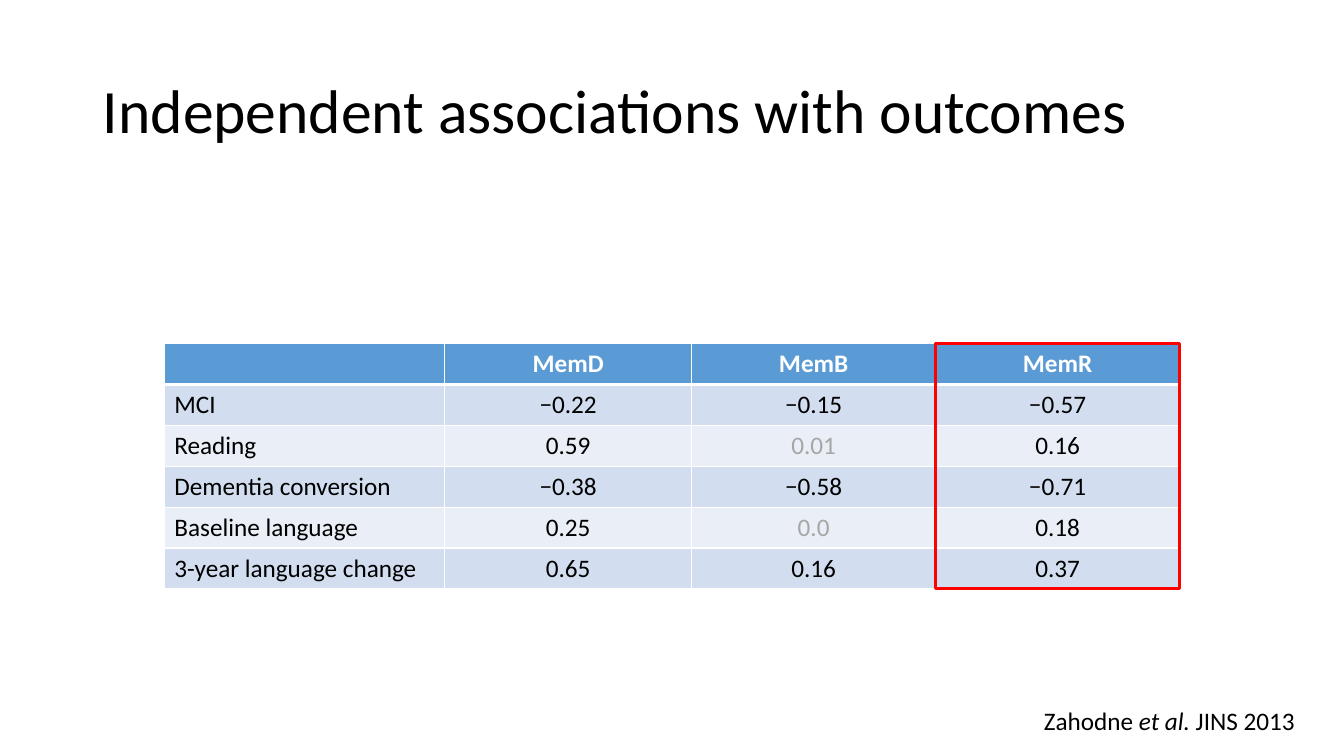
import pptx
import pptx.dml.color
import pptx.enum.shapes
import pptx.enum.text
import pptx.oxml
import pptx.oxml.ns
import pptx.util
from pptx.util import Inches

RGBColor = pptx.dml.color.RGBColor
PP_ALIGN = pptx.enum.text.PP_ALIGN
MSO_ANCHOR = pptx.enum.text.MSO_ANCHOR

BLACK = RGBColor(0x00, 0x00, 0x00)
WHITE = RGBColor(0xFF, 0xFF, 0xFF)
GREY = RGBColor(0xA6, 0xA6, 0xA6)
RED = RGBColor(0xFF, 0x00, 0x00)
HEADER_BLUE = RGBColor(0x5B, 0x9B, 0xD5)
BAND_DARK = RGBColor(0xD2, 0xDE, 0xEF)
BAND_LIGHT = RGBColor(0xEA, 0xEF, 0xF7)

OUTCOMES = [
    ["", "MemD", "MemB", "MemR"],
    ["MCI", "−0.22", "−0.15", "−0.57"],
    ["Reading", "0.59", "0.01", "0.16"],
    ["Dementia conversion", "−0.38", "−0.58", "−0.71"],
    ["Baseline language", "0.25", "0.0", "0.18"],
    ["3-year language change", "0.65", "0.16", "0.37"],
]
NOT_SIGNIFICANT = {(2, 2), (4, 2)}
TABLE_LEFT, TABLE_TOP = 1.63, 3.41
COL_WIDTHS = [2.78, 2.45, 2.42, 2.42]
ROW_HEIGHT = 0.405


def add_run(p, text, size=18, color=BLACK, bold=False, italic=False, font="Calibri"):
    r = p.add_run()
    r.text = text
    r.font.name = font
    r.font.size = pptx.util.Pt(size)
    r.font.bold = bold
    r.font.italic = italic
    r.font.color.rgb = color


def set_borders(cell, color, **widths):
    """Draw the cell's edges; widths maps L, R, T and B to points."""
    tcPr = cell._tc.get_or_add_tcPr()
    for side in "LRTB":
        width = pptx.util.Pt(widths.get(side, 1))
        tcPr.append(pptx.oxml.parse_xml(
            f'<a:ln{side} {pptx.oxml.ns.nsdecls("a")} w="{width}">'
            f'<a:solidFill><a:srgbClr val="{color}"/></a:solidFill></a:ln{side}>'))


class SlideBuilder:
    """Holds the presentation and the current slide."""

    def __init__(self):
        self.prs = pptx.Presentation()
        self.prs.slide_width = Inches(13.33)
        self.prs.slide_height = Inches(7.5)
        self.s = self.prs.slides.add_slide(self.prs.slide_layouts[5])

    def title(self, text, left, top, width, height):
        sp = self.s.shapes.title
        sp.left, sp.top = Inches(left), Inches(top)
        sp.width, sp.height = Inches(width), Inches(height)
        tf = sp.text_frame
        tf.vertical_anchor = MSO_ANCHOR.MIDDLE
        p = tf.paragraphs[0]
        p.alignment = PP_ALIGN.LEFT
        p.line_spacing = 0.9
        add_run(p, text, size=44)

    def table(self, rows, left, top, col_widths, row_height, muted):
        table = self.s.shapes.add_table(
            len(rows), len(col_widths), Inches(left), Inches(top),
            Inches(sum(col_widths)), Inches(row_height * len(rows))).table
        for col, width in zip(table.columns, col_widths):
            col.width = Inches(width)
        for i, row in enumerate(rows):
            header = i == 0
            for j, text in enumerate(row):
                cell = table.cell(i, j)
                set_borders(cell, WHITE, T=3 if i == 1 else 1, B=3 if header else 1)
                cell.fill.solid()
                cell.fill.fore_color.rgb = (
                    HEADER_BLUE if header else BAND_DARK if i % 2 else BAND_LIGHT)
                p = cell.text_frame.paragraphs[0]
                p.alignment = PP_ALIGN.CENTER if j else PP_ALIGN.LEFT
                if text:
                    color = WHITE if header else GREY if (i, j) in muted else BLACK
                    add_run(p, text, color=color, bold=header)

    def outline(self, left, top, width, height, color, weight):
        sp = self.s.shapes.add_shape(
            pptx.enum.shapes.MSO_SHAPE.RECTANGLE,
            Inches(left), Inches(top), Inches(width), Inches(height))
        sp.shadow.inherit = False
        sp.fill.background()
        sp.line.color.rgb = color
        sp.line.width = pptx.util.Pt(weight)

    def citation(self, parts, left, top, width, height):
        """Add right-aligned text from (text, italic) pairs."""
        tf = self.s.shapes.add_textbox(
            Inches(left), Inches(top), Inches(width), Inches(height)).text_frame
        tf.word_wrap = True
        tf.auto_size = pptx.enum.text.MSO_AUTO_SIZE.SHAPE_TO_FIT_TEXT
        p = tf.paragraphs[0]
        p.alignment = PP_ALIGN.RIGHT
        for text, italic in parts:
            add_run(p, text, italic=italic)


def main():
    b = SlideBuilder()
    b.title("Independent associations with outcomes", 0.92, 0.4, 11.5, 1.45)
    b.table(OUTCOMES, TABLE_LEFT, TABLE_TOP, COL_WIDTHS, ROW_HEIGHT, NOT_SIGNIFICANT)
    b.outline(TABLE_LEFT + sum(COL_WIDTHS[:-1]), TABLE_TOP, COL_WIDTHS[-1],
              ROW_HEIGHT * len(OUTCOMES), RED, 2)
    b.citation([("Zahodne ", False), ("et al.", True), (" JINS 2013", False)],
               9.52, 6.95, 3.42, 0.4)
    b.prs.save("out.pptx")


if __name__ == "__main__":
    main()
